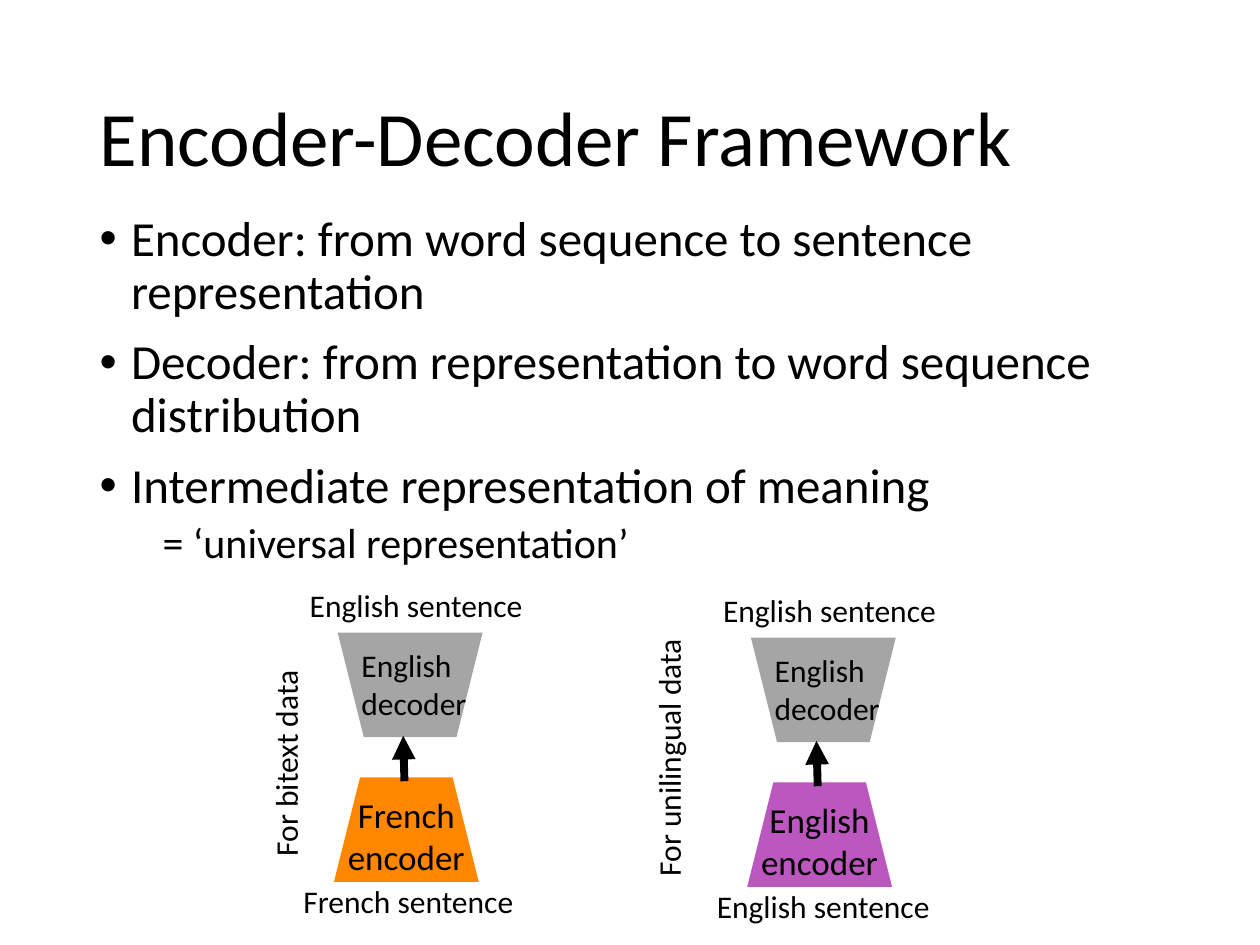
from dataclasses import dataclass

from lxml import etree
from pptx import Presentation
from pptx.dml.color import RGBColor
from pptx.enum.shapes import MSO_CONNECTOR, MSO_SHAPE
from pptx.enum.text import MSO_ANCHOR, MSO_AUTO_SIZE, PP_ALIGN
from pptx.oxml.ns import qn
from pptx.util import Inches, Pt

BLACK = RGBColor(0x00, 0x00, 0x00)
GRAY = RGBColor(0xA5, 0xA5, 0xA5)
ORANGE = RGBColor(0xFF, 0x87, 0x00)
PURPLE = RGBColor(0xBB, 0x57, 0xBE)
FONT = "Calibri"
TRAPEZOID = MSO_SHAPE.TRAPEZOID
STRAIGHT = MSO_CONNECTOR.STRAIGHT
LEFT, CENTER = PP_ALIGN.LEFT, PP_ALIGN.CENTER
TOP, MIDDLE = MSO_ANCHOR.TOP, MSO_ANCHOR.MIDDLE
NO_FIT, GROW = MSO_AUTO_SIZE.NONE, MSO_AUTO_SIZE.SHAPE_TO_FIT_TEXT
BLOCK_WIDTH, BLOCK_HEIGHT = 1.15, 0.83


@dataclass
class Label:
    text: str
    left: float
    top: float
    width: float


@dataclass
class Model:
    """One encoder-decoder pair; left and top locate its encoder block."""
    left: float
    top: float
    language: str
    color: RGBColor
    source_width: float
    caption: Label


@dataclass
class Bullet:
    text: str
    level: int
    size: int
    space_before: int
    margin: float
    indent: float
    mark: str


MODELS = [
    Model(2.65, 6.17, "French", ORANGE, 1.89,
          Label("For bitext data", 1.41, 5.84, 1.71)),
    Model(5.93, 6.21, "English", PURPLE, 1.91,
          Label("For unilingual data", 4.25, 5.8, 2.11)),
]
BULLETS = [
    Bullet("Encoder: from word sequence to sentence representation", 0, 28, 10, 0.25, -0.25, "•"),
    Bullet("Decoder: from representation to word sequence distribution", 0, 28, 10, 0.25, -0.25, "•"),
    Bullet("Intermediate representation of meaning", 0, 28, 10, 0.25, -0.25, "•"),
    Bullet("= ‘universal representation’", 1, 24, 5, 0.5, 0, ""),
]


def place(shape, left: float, top: float, width: float, height: float) -> None:
    shape.left, shape.top = Inches(left), Inches(top)
    shape.width, shape.height = Inches(width), Inches(height)


def add_span(para, text: str, size: float) -> None:
    span = para.add_run()
    span.text = text
    span.font.name = FONT
    span.font.size = Pt(size)
    span.font.color.rgb = BLACK


def write_lines(frame, lines: list[str], size: float, align, anchor) -> None:
    frame.word_wrap = False
    frame.vertical_anchor = anchor
    for index, line in enumerate(lines):
        para = frame.add_paragraph() if index else frame.paragraphs[0]
        para.alignment = align
        add_span(para, line, size)


def add_label(shapes, lines: list[str], left: float, top: float,
              width: float, height: float = 0.4, rotation: float = 0) -> None:
    box = shapes.add_textbox(Inches(left), Inches(top), Inches(width), Inches(height))
    box.rotation = rotation
    write_lines(box.text_frame, lines, 18, LEFT, TOP)
    box.text_frame.auto_size = GROW


def add_block(shapes, left: float, top: float, color: RGBColor):
    block = shapes.add_shape(TRAPEZOID, Inches(left), Inches(top),
                             Inches(BLOCK_WIDTH), Inches(BLOCK_HEIGHT))
    block.shadow.inherit = False
    block.fill.solid()
    block.fill.fore_color.rgb = color
    block.line.fill.background()
    return block


def add_arrow(shapes, start: tuple[float, float], end: tuple[float, float]) -> None:
    arrow = shapes.add_connector(STRAIGHT, *map(Inches, start + end))
    arrow.line.color.rgb = BLACK
    arrow.line.width = Pt(4.5)
    line = arrow.line._get_or_add_ln()
    etree.SubElement(line, qn("a:tailEnd"), type="triangle")
    etree.SubElement(arrow._element.spPr, qn("a:effectLst"))


def add_model(shapes, model: Model) -> None:
    left, top = model.left, model.top
    encoder = add_block(shapes, left, top, model.color)
    write_lines(encoder.text_frame, [model.language, "encoder"], 20, CENTER, MIDDLE)

    decoder = shapes.add_group_shape()
    add_block(decoder.shapes, left + 0.03, top - 1.15, GRAY).rotation = 180
    add_label(decoder.shapes, ["English", "decoder"], left + 0.12, top - 1.09, 1.05, 0.71)

    add_arrow(shapes, (left + 0.56, top + 0.03), (left + 0.55, top - 0.33))
    add_label(shapes, [f"{model.language} sentence"], left - 0.34, top + 0.78, model.source_width)
    add_label(shapes, ["English sentence"], left - 0.29, top - 1.57, 1.91)
    caption = model.caption
    add_label(shapes, [caption.text], caption.left, caption.top, caption.width, rotation=270)


def fill_title(title) -> None:
    place(title, 0.69, 0.4, 8.62, 1.45)
    frame = title.text_frame
    write_lines(frame, ["Encoder-Decoder Framework"], 44, LEFT, MIDDLE)
    frame.word_wrap = True
    frame.auto_size = NO_FIT
    frame.paragraphs[0].line_spacing = 0.9


def fill_body(body) -> None:
    place(body, 0.69, 1.65, 8.62, 4.76)
    frame = body.text_frame
    frame.word_wrap = True
    frame.auto_size = NO_FIT
    for index, bullet in enumerate(BULLETS):
        para = frame.add_paragraph() if index else frame.paragraphs[0]
        para.level = bullet.level
        para.line_spacing = 0.9
        para.space_before = Pt(bullet.space_before)
        properties = para._p.get_or_add_pPr()
        properties.set("marL", str(Inches(bullet.margin)))
        properties.set("indent", str(Inches(bullet.indent)))
        if bullet.mark:
            etree.SubElement(properties, qn("a:buFont"), typeface="Arial")
            etree.SubElement(properties, qn("a:buChar"), char=bullet.mark)
        else:
            etree.SubElement(properties, qn("a:buNone"))
        add_span(para, bullet.text, bullet.size)


def main() -> None:
    deck = Presentation()
    deck.slide_width, deck.slide_height = Inches(10), Inches(7.5)
    page = deck.slides.add_slide(deck.slide_layouts[1])
    fill_title(page.shapes.title)
    fill_body(page.placeholders[1])
    for model in MODELS:
        add_model(page.shapes, model)
    deck.save("out.pptx")


if __name__ == "__main__":
    main()
